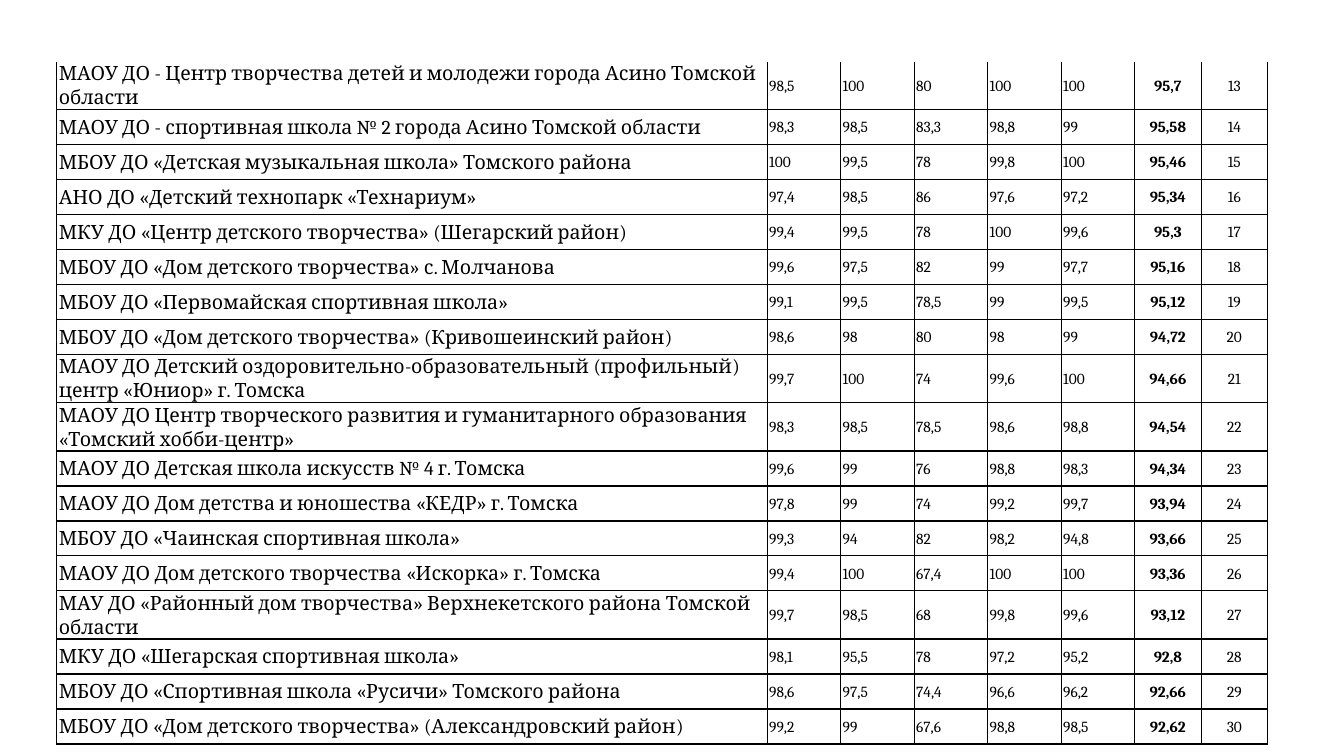
import pptx
import pptx.dml.color
import pptx.enum.text
import pptx.oxml
import pptx.oxml.ns
import pptx.util

EMU_PER_PX = 6350
COLORS = {"ink": "000000"}
COLUMN_WIDTHS = [1015] + [105] * 5 + [95] * 2
ROW_HEIGHT = 50
FIRST_RANK = 13
TOTAL_COLUMN = 6
LEFT = pptx.enum.text.PP_ALIGN.LEFT
CENTER = pptx.enum.text.PP_ALIGN.CENTER

SCHOOLS = [
    ("МАОУ ДО - Центр творчества детей и молодежи города Асино Томской области", "98,5 100 80 100 100 95,7"),
    ("МАОУ ДО - спортивная школа № 2 города Асино Томской области", "98,3 98,5 83,3 98,8 99 95,58"),
    ("МБОУ ДО «Детская музыкальная школа» Томского района", "100 99,5 78 99,8 100 95,46"),
    ("АНО ДО «Детский технопарк «Технариум»", "97,4 98,5 86 97,6 97,2 95,34"),
    ("МКУ ДО «Центр детского творчества» (Шегарский район)", "99,4 99,5 78 100 99,6 95,3"),
    ("МБОУ ДО «Дом детского творчества» с. Молчанова", "99,6 97,5 82 99 97,7 95,16"),
    ("МБОУ ДО «Первомайская спортивная школа»", "99,1 99,5 78,5 99 99,5 95,12"),
    ("МБОУ ДО «Дом детского творчества» (Кривошеинский район)", "98,6 98 80 98 99 94,72"),
    ("МАОУ ДО Детский оздоровительно-образовательный (профильный) центр «Юниор» г. Томска", "99,7 100 74 99,6 100 94,66"),
    ("МАОУ ДО Центр творческого развития и гуманитарного образования «Томский хобби-центр»", "98,3 98,5 78,5 98,6 98,8 94,54"),
    ("МАОУ ДО Детская школа искусств № 4 г. Томска", "99,6 99 76 98,8 98,3 94,34"),
    ("МАОУ ДО Дом детства и юношества «КЕДР» г. Томска", "97,8 99 74 99,2 99,7 93,94"),
    ("МБОУ ДО «Чаинская спортивная школа»", "99,3 94 82 98,2 94,8 93,66"),
    ("МАОУ ДО Дом детского творчества «Искорка» г. Томска", "99,4 100 67,4 100 100 93,36"),
    ("МАУ ДО «Районный дом творчества» Верхнекетского района Томской области", "99,7 98,5 68 99,8 99,6 93,12"),
    ("МКУ ДО «Шегарская спортивная школа»", "98,1 95,5 78 97,2 95,2 92,8"),
    ("МБОУ ДО «Спортивная школа «Русичи» Томского района", "98,6 97,5 74,4 96,6 96,2 92,66"),
    ("МБОУ ДО «Дом детского творчества» (Александровский район)", "99,2 99 67,6 98,8 98,5 92,62"),
]


def px(length):
    return pptx.util.Emu(length * EMU_PER_PX)


def write_text(text_frame, text, size=11, bold=False, align=LEFT, font="Cambria", color="ink"):
    paragraph = text_frame.paragraphs[0]
    paragraph.alignment = align
    paragraph.line_spacing = 1.07
    run = paragraph.add_run()
    run.text = text
    run.font.name = font
    run.font.size = pptx.util.Pt(size)
    run.font.bold = bold
    run.font.color.rgb = pptx.dml.color.RGBColor.from_string(COLORS[color])


class SlideBuilder:
    def __init__(self, slide, border_color="ink", border_width=1, side_margin=3):
        self.slide = slide
        self.border_color = COLORS[border_color]
        self.border_width = pptx.util.Pt(border_width)
        self.side_margin = px(side_margin)

    def border(self, cell, side, visible=True):
        paint = f'<a:solidFill><a:srgbClr val="{self.border_color}"/></a:solidFill>' if visible else "<a:noFill/>"
        namespace = pptx.oxml.ns.nsdecls("a")
        line = f'<a:ln{side} {namespace} w="{self.border_width}">{paint}</a:ln{side}>'
        cell._tc.get_or_add_tcPr().append(pptx.oxml.parse_xml(line))

    def cell(self, cell, text, top_border=True, **text_format):
        cell.margin_left = cell.margin_right = self.side_margin
        cell.margin_top = cell.margin_bottom = 0
        cell.vertical_anchor = pptx.enum.text.MSO_ANCHOR.MIDDLE
        for side in "LRTB":
            self.border(cell, side, visible=top_border or side != "T")
        cell.fill.background()
        write_text(cell.text_frame, text, **text_format)

    def table(self, left, top, widths, row_height, rows, column_formats):
        frame = self.slide.shapes.add_table(
            len(rows), len(widths), px(left), px(top), px(sum(widths)), px(row_height * len(rows))
        )
        table = frame.table
        table.first_row = table.horz_banding = False
        for column, width in zip(table.columns, widths):
            column.width = px(width)
        for row_index, values in enumerate(rows):
            table.rows[row_index].height = px(row_height)
            for column_index, value in enumerate(values):
                self.cell(
                    table.cell(row_index, column_index),
                    value,
                    top_border=row_index > 0,
                    **column_formats.get(column_index, {}),
                )


def main():
    presentation = pptx.Presentation()
    presentation.slide_width = px(1920)
    presentation.slide_height = px(1080)
    builder = SlideBuilder(presentation.slides.add_slide(presentation.slide_layouts[6]))
    rows = [
        [school, *scores.split(), str(rank)]
        for rank, (school, scores) in enumerate(SCHOOLS, FIRST_RANK)
    ]
    column_formats = {
        0: {"size": 14},
        TOTAL_COLUMN: {"bold": True, "align": CENTER},
        TOTAL_COLUMN + 1: {"align": CENTER},
    }
    builder.table(81, 88, COLUMN_WIDTHS, ROW_HEIGHT, rows, column_formats)
    presentation.save("out.pptx")


if __name__ == "__main__":
    main()
